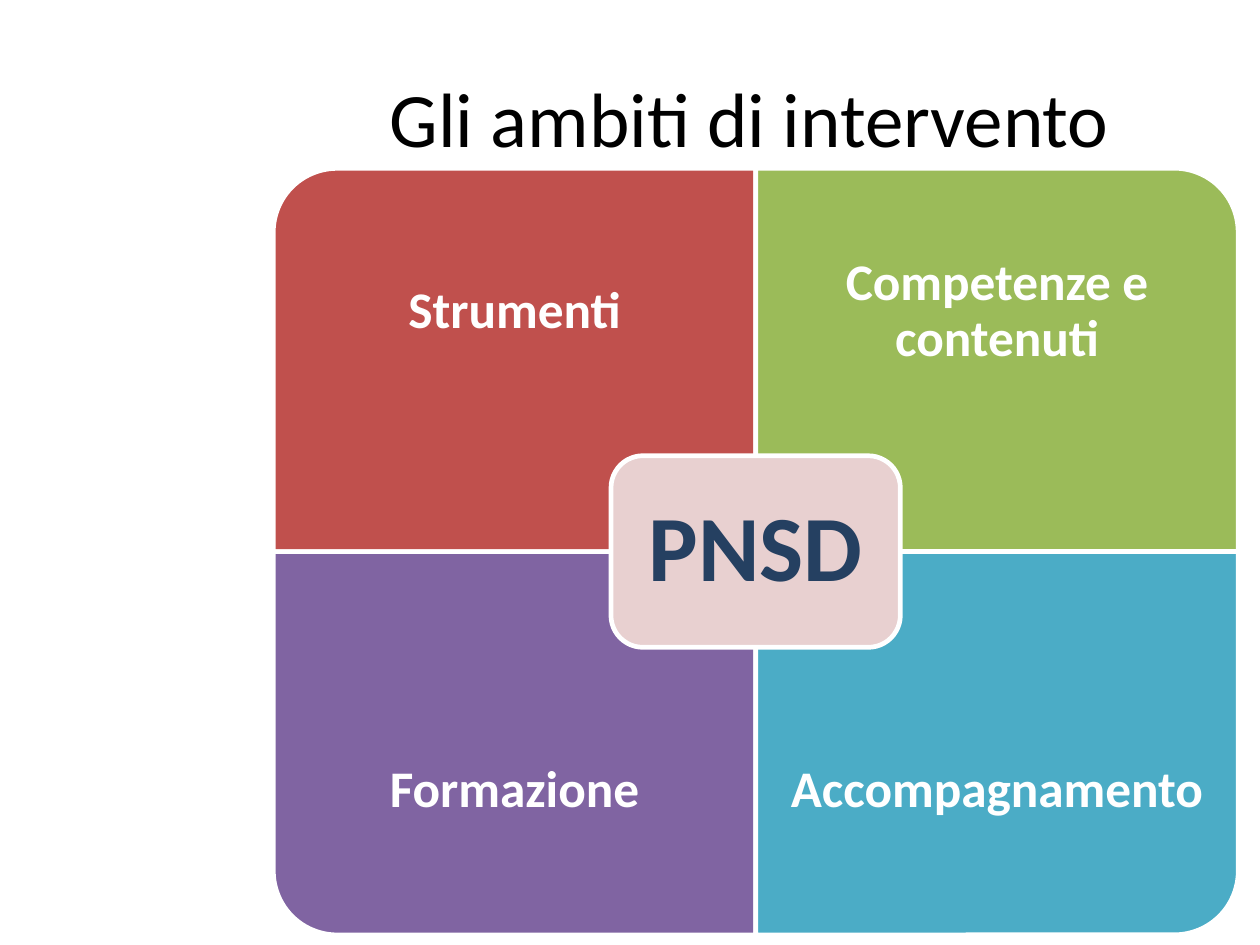
from pptx import Presentation
from pptx.dml.color import RGBColor
from pptx.enum.shapes import MSO_SHAPE
from pptx.enum.text import MSO_ANCHOR, PP_ALIGN
from pptx.util import Pt

TITLE = "Gli ambiti di intervento"
# label, column, row, fill, rotation that turns the round corner outwards
AREAS = [
    ("Strumenti", 0, 0, "C0504D", 270),
    ("Competenze e contenuti", 1, 0, "9BBB59", 0),
    ("Formazione", 0, 1, "8064A2", 180),
    ("Accompagnamento", 1, 1, "4BACC6", 90),
]
HUB = "PNSD"

SLIDE_W, SLIDE_H = 540, 405
TITLE_BOX = (129.6, 16.3, 383.2, 67.7)
CENTER_X, CENTER_Y = 323.9, 236.4
AREA_W, AREA_H = 206.8, 164.3
LABEL_H = AREA_H * 0.75
HUB_W, HUB_H = 124, 82.1
HUB_INSET = 4
LABEL_MARGIN = 12.2
HUB_MARGIN = 6


def color(hex_value):
    return RGBColor.from_string(hex_value)


def add_block(preset, box, fill, rotation=0):
    left, top, width, height = box
    if rotation % 180:
        left, top = left + (width - height) / 2, top + (height - width) / 2
        width, height = height, width
    block = slide.shapes.add_shape(preset, Pt(left), Pt(top), Pt(width), Pt(height))
    block.rotation = rotation
    block.shadow.inherit = False
    block.fill.solid()
    block.fill.fore_color.rgb = color(fill)
    block.line.color.rgb = color("FFFFFF")
    block.line.width = Pt(2)


def add_label(text, box, size, text_color, bold=True, margin=LABEL_MARGIN, spacing=0.9):
    frame = slide.shapes.add_textbox(*map(Pt, box)).text_frame
    frame_format = {"word_wrap": True, "vertical_anchor": MSO_ANCHOR.MIDDLE}
    for side in ("left", "top", "right", "bottom"):
        frame_format["margin_" + side] = Pt(margin)
    for name, value in frame_format.items():
        setattr(frame, name, value)
    paragraph = frame.paragraphs[0]
    paragraph.alignment = PP_ALIGN.CENTER
    paragraph.line_spacing = spacing
    run = paragraph.add_run()
    run.text = text
    for name, value in {"name": "Calibri", "size": Pt(size), "bold": bold}.items():
        setattr(run.font, name, value)
    run.font.color.rgb = color(text_color)


deck = Presentation()
deck.slide_width, deck.slide_height = Pt(SLIDE_W), Pt(SLIDE_H)
slide = deck.slides.add_slide(deck.slide_layouts[6])

add_label(TITLE, TITLE_BOX, 33, "000000", bold=False, margin=4, spacing=1.0)

for label, column, row, fill, rotation in AREAS:
    left = CENTER_X + (column - 1) * AREA_W
    top = CENTER_Y + (row - 1) * AREA_H
    add_block(MSO_SHAPE.ROUND_1_RECTANGLE, (left, top, AREA_W, AREA_H), fill, rotation)
    label_top = top + row * (AREA_H - LABEL_H)
    add_label(label, (left, label_top, AREA_W, LABEL_H), 22, "FFFFFF")

hub_left, hub_top = CENTER_X - HUB_W / 2, CENTER_Y - HUB_H / 2
add_block(MSO_SHAPE.ROUNDED_RECTANGLE, (hub_left, hub_top, HUB_W, HUB_H), "E8D0D0")
hub_label_box = (hub_left + HUB_INSET, hub_top + HUB_INSET,
                 HUB_W - 2 * HUB_INSET, HUB_H - 2 * HUB_INSET)
add_label(HUB, hub_label_box, 40, "254061", margin=HUB_MARGIN)

deck.save("out.pptx")
